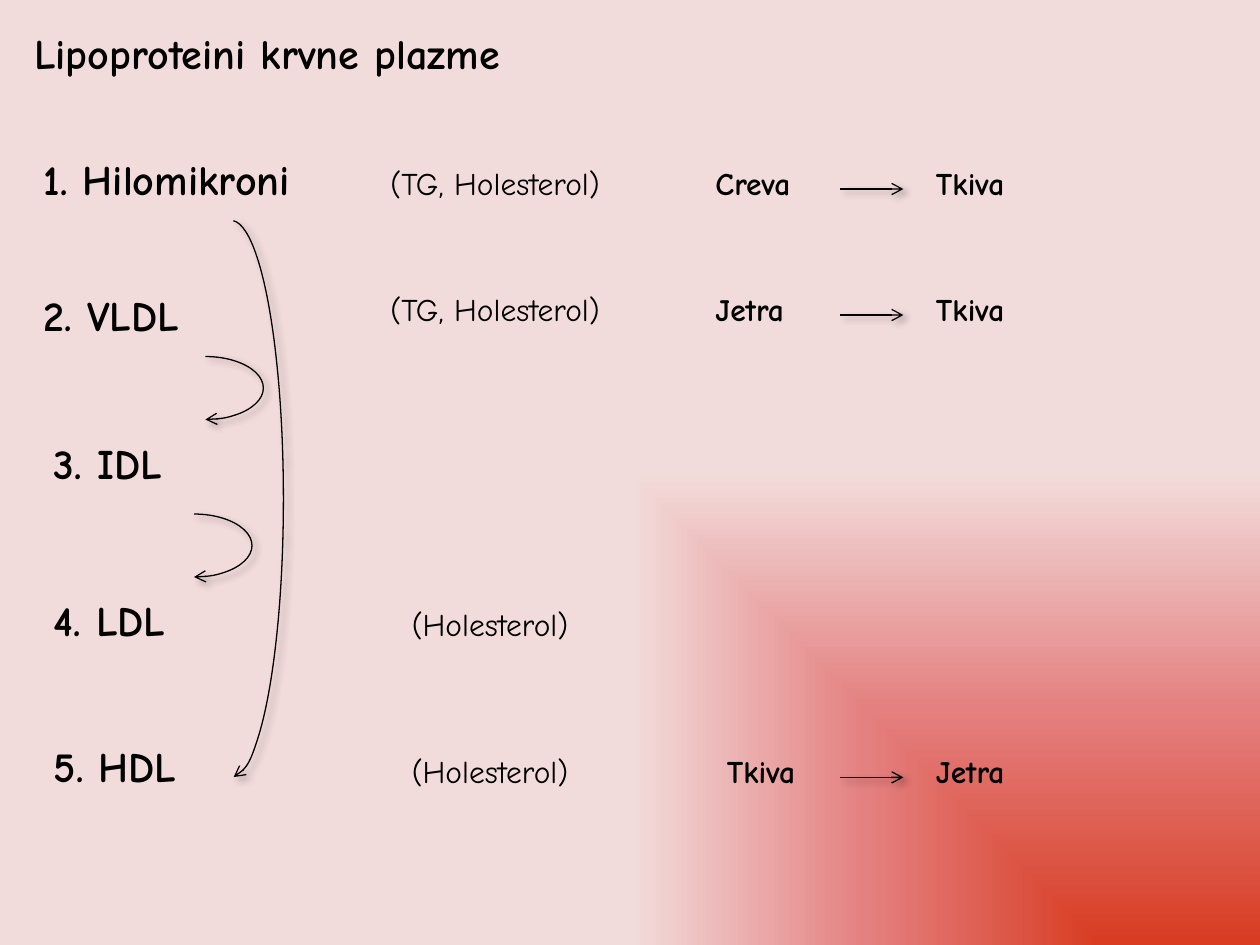
from dataclasses import dataclass

from lxml import etree
from pptx import Presentation
from pptx.dml.color import RGBColor
from pptx.enum.shapes import MSO_CONNECTOR, MSO_SHAPE
from pptx.enum.text import MSO_ANCHOR, MSO_AUTO_SIZE, PP_ALIGN
from pptx.oxml import parse_xml
from pptx.oxml.ns import nsdecls, qn
from pptx.util import Inches, Pt

ARC = MSO_SHAPE.ARC
STRAIGHT = MSO_CONNECTOR.STRAIGHT
TOP = MSO_ANCHOR.TOP
LEFT = PP_ALIGN.LEFT
GROW = MSO_AUTO_SIZE.SHAPE_TO_FIT_TEXT


@dataclass(frozen=True)
class Theme:
    font: str = "Comic Neue"
    ink: str = "000000"
    heading: int = 24
    detail: int = 18
    line: float = 0.75
    gradient: tuple = ((0, "D83C22"), (50, "E48080"), (100, "F2DCDB"))


@dataclass(frozen=True)
class Label:
    text: str
    left: float
    top: float
    width: float


@dataclass(frozen=True)
class Arc:
    left: float
    top: float
    width: float
    height: float
    start: float = 162
    end: float = 54


THEME = Theme()
HEADING_HEIGHT, DETAIL_HEIGHT = 0.51, 0.4
ARROW_START, ARROW_END = 6.67, 7.17

CLASSES = (
    Label("1. Hilomikroni", 0.25, 1.17, 2.47),
    Label("2. VLDL", 0.25, 2.25, 1.57),
    Label("3. IDL", 0.33, 3.42, 1.31),
    Label("4. LDL", 0.33, 4.67, 1.31),
    Label("5. HDL", 0.33, 5.83, 1.39),
)
CONTENTS = (
    Label("(TG, Holesterol)", 3, 1.25, 2.11),
    Label("(TG, Holesterol)", 3, 2.25, 2.11),
    Label("(Holesterol)", 3.17, 4.75, 1.62),
    Label("(Holesterol)", 3.17, 5.92, 1.62),
)
# Each transport route runs from one label to another on the same row.
ROUTES = (
    (Label("Creva", 5.58, 1.25, 0.88), Label("Tkiva", 7.33, 1.25, 0.85)),
    (Label("Jetra", 5.58, 2.25, 0.89), Label("Tkiva", 7.33, 2.25, 0.85)),
    (Label("Tkiva", 5.67, 5.92, 0.85), Label("Jetra", 7.33, 5.92, 0.89)),
)
CONVERSIONS = (
    Arc(1.17, 2.83, 0.92, 0.5),
    Arc(1.08, 4.08, 0.92, 0.5),
    Arc(1.42, 1.75, 0.83, 4.42, 162.28, 53.69),
)


def paint_background(s) -> None:
    """Fill the background with a gradient centred on the bottom right corner."""
    s.background.fill.gradient()
    old = s.element.find(".//" + qn("a:gradFill"))
    stops = "".join(
        f'<a:gs pos="{pos * 1000}"><a:srgbClr val="{color}"/></a:gs>'
        for pos, color in THEME.gradient
    )
    new = parse_xml(
        f'<a:gradFill {nsdecls("a")} rotWithShape="1"><a:gsLst>{stops}</a:gsLst>'
        '<a:path path="rect"><a:fillToRect l="100000" t="100000"/></a:path>'
        "</a:gradFill>"
    )
    old.getparent().replace(old, new)


def write_text(sp, text: str, *, size: int, bold: bool = True) -> None:
    tf = sp.text_frame
    tf.word_wrap = False
    tf.auto_size = GROW
    tf.vertical_anchor = TOP
    p = tf.paragraphs[0]
    p.alignment = LEFT
    r = p.add_run()
    r.text = text
    r.font.name = THEME.font
    r.font.size = Pt(size)
    r.font.bold = bold
    r.font.color.rgb = RGBColor.from_string(THEME.ink)


def add_label(s, label: Label, *, size: int, height: float, bold: bool = True) -> None:
    sp = s.shapes.add_textbox(
        Inches(label.left), Inches(label.top), Inches(label.width), Inches(height)
    )
    write_text(sp, label.text, size=size, bold=bold)


def style_arrow(sp) -> None:
    """Give a line or arc its stroke, open arrowhead and soft shadow."""
    sp.line.color.rgb = RGBColor.from_string(THEME.ink)
    sp.line.width = Pt(THEME.line)
    spPr = sp._element.spPr
    etree.SubElement(spPr.find(qn("a:ln")), qn("a:tailEnd"), type="arrow")
    spPr.append(parse_xml(
        f'<a:effectLst {nsdecls("a")}><a:outerShdw blurRad="{Pt(4)}" '
        f'dist="{Pt(3)}" dir="{45 * 60000}" algn="tl" rotWithShape="0">'
        f'<a:srgbClr val="{THEME.ink}"><a:alpha val="40000"/></a:srgbClr>'
        "</a:outerShdw></a:effectLst>"
    ))


def add_arc(s, arc: Arc) -> None:
    sp = s.shapes.add_shape(
        ARC, Inches(arc.left), Inches(arc.top), Inches(arc.width), Inches(arc.height)
    )
    sp.adjustments[0] = arc.start
    sp.adjustments[1] = arc.end
    sp.fill.background()
    style_arrow(sp)


def add_route(s, origin: Label, target: Label) -> None:
    for label in (origin, target):
        add_label(s, label, size=THEME.detail, height=DETAIL_HEIGHT)
    y = Inches(origin.top + 0.25)
    style_arrow(s.shapes.add_connector(
        STRAIGHT, Inches(ARROW_START), y, Inches(ARROW_END), y
    ))


def main() -> None:
    prs = Presentation()
    prs.slide_width, prs.slide_height = Inches(10), Inches(7.5)
    s = prs.slides.add_slide(prs.slide_layouts[5])
    paint_background(s)

    title = s.shapes.title
    title.left, title.top = Inches(0.17), Inches(0.17)
    title.width, title.height = Inches(4.32), Inches(HEADING_HEIGHT)
    write_text(title, "Lipoproteini krvne plazme", size=THEME.heading)

    for label in CLASSES:
        add_label(s, label, size=THEME.heading, height=HEADING_HEIGHT)
    for arc in CONVERSIONS:
        add_arc(s, arc)
    for origin, target in ROUTES:
        add_route(s, origin, target)
    for label in CONTENTS:
        add_label(s, label, size=THEME.detail, height=DETAIL_HEIGHT, bold=False)

    prs.save("out.pptx")


if __name__ == "__main__":
    main()
